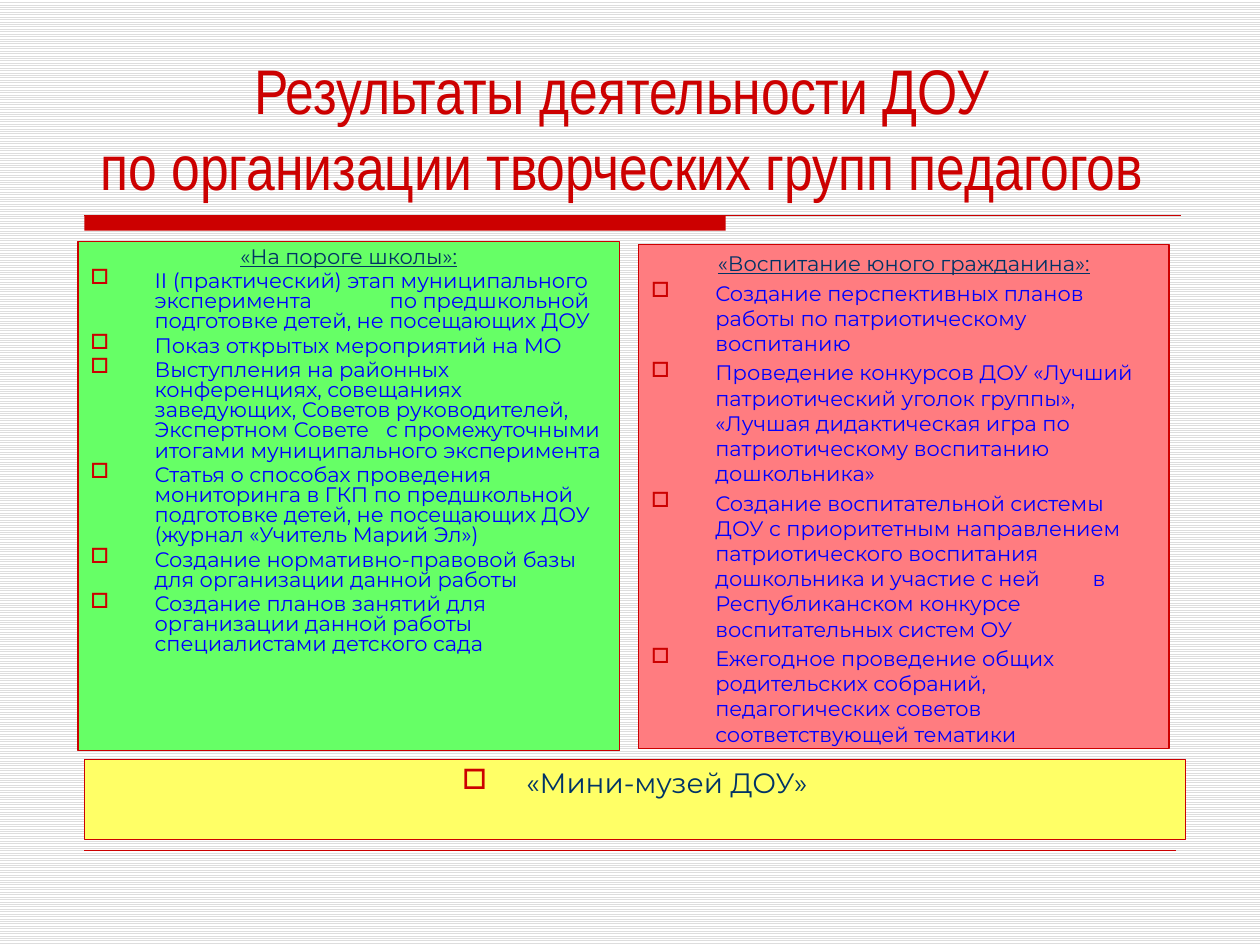
from lxml import etree
from pptx import Presentation
from pptx import util as u
from pptx.dml.color import RGBColor
from pptx.enum import dml, shapes, text
from pptx.oxml.ns import qn

RED, NAVY, BLUE = "CC0000", "003366", "0000FF"
BODY_FONT, TITLE_FONT = "Montserrat", "Arial Narrow"
INDENT = 36.7

# Content
TITLE = ["Результаты деятельности ДОУ",
         "по организации творческих групп педагогов"]
# Each panel: box (left, top, width, height), fill, line spacing, heading,
# and items as (text, tab stop or None)
PANELS = [
    ((44.6, 138.2, 309.6, 290.9), "66FF66", 0.8, "«На пороге школы»:", [
        ("II (практический) этап муниципального эксперимента\tпо предшкольной "
         "подготовке детей, не посещающих ДОУ", 171),
        ("Показ открытых мероприятий на МО", None),
        ("Выступления на районных конференциях, совещаниях заведующих, "
         "Советов руководителей, Экспертном Совете\tс промежуточными итогами "
         "муниципального эксперимента", 169),
        ("Статья о способах проведения мониторинга в ГКП по предшкольной "
         "подготовке детей, не посещающих ДОУ (журнал «Учитель Марий Эл»)", None),
        ("Создание нормативно-правовой базы для организации данной работы", None),
        ("Создание планов занятий для организации данной работы "
         "специалистами детского сада", None),
    ]),
    ((365, 139.7, 303.1, 288), "FF7C80", 1.0, "«Воспитание юного гражданина»:", [
        ("Создание перспективных планов работы по патриотическому воспитанию", None),
        ("Проведение конкурсов ДОУ «Лучший патриотический уголок группы», "
         "«Лучшая дидактическая игра по патриотическому воспитанию "
         "дошкольника»", None),
        ("Создание воспитательной системы ДОУ с приоритетным направлением "
         "патриотического воспитания дошкольника и участие с ней\tв "
         "Республиканском конкурсе воспитательных систем ОУ", 276),
        ("Ежегодное проведение общих родительских собраний, педагогических "
         "советов соответствующей тематики", None),
    ]),
]
MUSEUM_BOX, MUSEUM = (48.2, 434.2, 629.3, 45.4), "«Мини-музей ДОУ»"


def color(value):
    return RGBColor.from_string(value)


def add_box(slide, box, fill, line=RED):
    shape = slide.shapes.add_shape(shapes.MSO_SHAPE.RECTANGLE, *map(u.Pt, box))
    shape.shadow.inherit = False
    shape.fill.solid()
    shape.fill.fore_color.rgb = color(fill)
    shape.line.color.rgb = color(line)
    shape.line.width = u.Pt(0.75)
    shape.text_frame.word_wrap = True
    shape.text_frame.vertical_anchor = text.MSO_ANCHOR.TOP
    return shape


def add_rule(slide, left, right, y, width):
    line = slide.shapes.add_connector(
        shapes.MSO_CONNECTOR.STRAIGHT, *map(u.Pt, (left, y, right, y)))
    line.line.color.rgb = color(RED)
    line.line.width = u.Pt(width)
    etree.SubElement(line._element.spPr, qn("a:effectLst"))


def add_paragraph(frame, words, size, ink, font=BODY_FONT, centered=False,
                  bullet=False, tab=None, spacing=None, underline=False):
    first = not frame.text
    paragraph = frame.paragraphs[0] if first else frame.add_paragraph()
    paragraph.text = words
    paragraph.alignment = text.PP_ALIGN.CENTER if centered else text.PP_ALIGN.LEFT
    properties = paragraph._p.get_or_add_pPr()
    if spacing:
        properties.set("marL", str(u.Pt(INDENT)))
        properties.set("indent", str(-u.Pt(INDENT)))
        paragraph.line_spacing = spacing
        if not first:
            paragraph.space_before = u.Pt(size * 0.2)
    if bullet:
        bullet_color = etree.SubElement(properties, qn("a:buClr"))
        etree.SubElement(bullet_color, qn("a:srgbClr"), val=RED)
        etree.SubElement(properties, qn("a:buChar"), char="□")
    if tab:
        tabs = etree.SubElement(properties, qn("a:tabLst"))
        etree.SubElement(tabs, qn("a:tab"), pos=str(u.Pt(tab)), algn="l")
    paragraph.font.name = font
    paragraph.font.size = u.Pt(size)
    paragraph.font.color.rgb = color(ink)
    paragraph.font.underline = underline


presentation = Presentation()
presentation.slide_width, presentation.slide_height = u.Pt(720), u.Pt(540)
slide = presentation.slides.add_slide(presentation.slide_layouts[6])

# Striped background
background = slide.background.fill
background.patterned()
background.pattern = dml.MSO_PATTERN.LIGHT_HORIZONTAL
background.fore_color.rgb = color("DDDDDD")
background.back_color.rgb = color("FFFFFF")

# Bar and rule under the title, rule at the foot
bar = add_box(slide, (48.2, 123.1, 366.5, 8.7), RED)
bar.line.fill.background()
add_rule(slide, 48.2, 674.6, 123.1, 0.75)
add_rule(slide, 48.2, 671.8, 486, 0.25)

# Two panels with bulleted results
for box, fill, spacing, heading, items in PANELS:
    frame = add_box(slide, box, fill).text_frame
    add_paragraph(frame, heading, 12, NAVY, centered=True,
                  spacing=spacing, underline=True)
    for words, tab in items:
        add_paragraph(frame, words, 12, BLUE, bullet=True, tab=tab, spacing=spacing)

# Museum strip
frame = add_box(slide, MUSEUM_BOX, "FFFF66").text_frame
add_paragraph(frame, MUSEUM, 16, NAVY, centered=True, bullet=True, spacing=1.0)

# Title
title = slide.shapes.add_textbox(*map(u.Pt, (31, 25.9, 648.7, 85))).text_frame
title.word_wrap = False
for words in TITLE:
    add_paragraph(title, words, 36, RED, font=TITLE_FONT, centered=True)

presentation.save("out.pptx")
